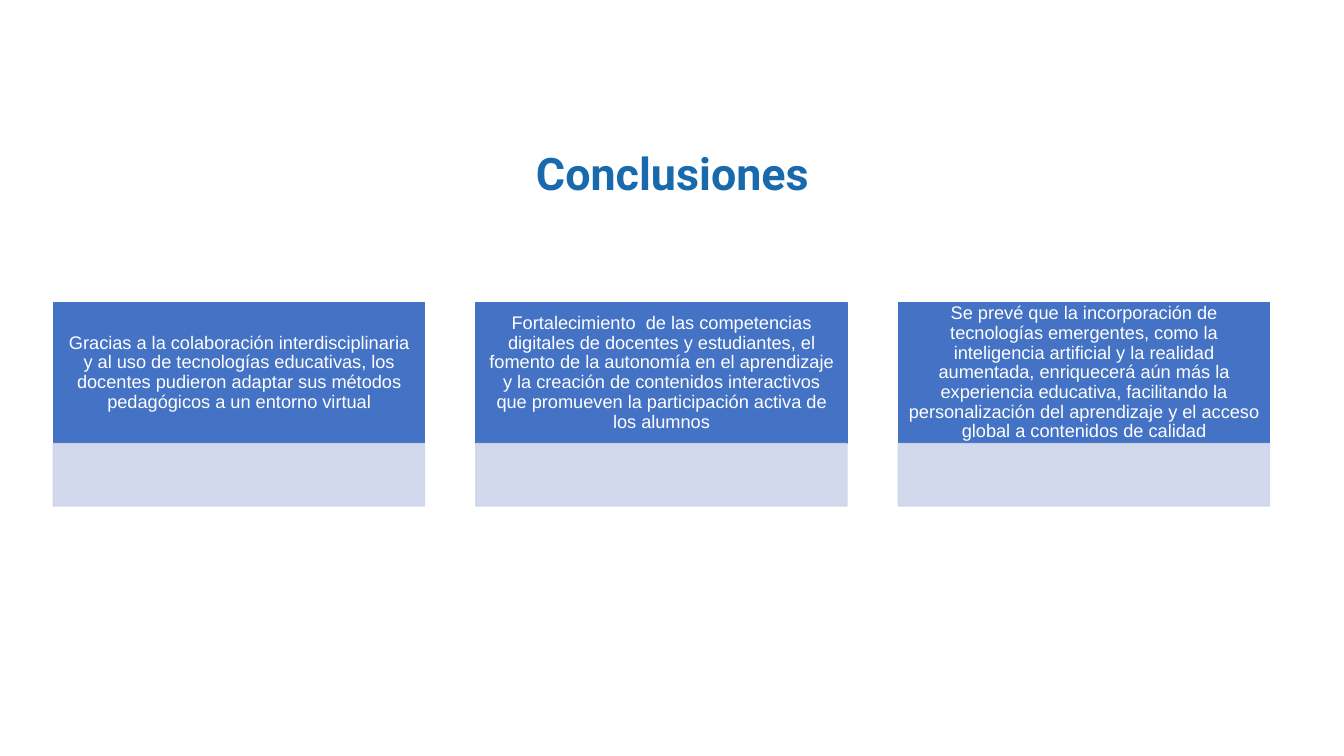
from lxml import etree
from pptx import Presentation
from pptx import util as u
from pptx.dml.color import RGBColor
from pptx.enum import shapes, text
from pptx.oxml.ns import qn

WIDE, HIGH = 13.33, 7.5
LEFT, TOP, STEP = 0.53, 3, 4.19
CARD, HEAD, FOOT = 3.68, 1.4, 0.62
BLUE, PALE, WHITE, TITLE = "4472C4", "CFD5EA", "FFFFFF", "186AAD"
POINTS = [
    "Gracias a la colaboración interdisciplinaria y al uso de tecnologías educativas, "
    "los docentes pudieron adaptar sus métodos pedagógicos a un entorno virtual",
    "Fortalecimiento  de las competencias digitales de docentes y estudiantes, el fomento "
    "de la autonomía en el aprendizaje y la creación de contenidos interactivos que "
    "promueven la participación activa de los alumnos",
    "Se prevé que la incorporación de tecnologías emergentes, como la inteligencia "
    "artificial y la realidad aumentada, enriquecerá aún más la experiencia educativa, "
    "facilitando la personalización del aprendizaje y el acceso global a contenidos de calidad",
]


def paint(fill, code, alpha=100):
    fill.solid()
    fill.fore_color.rgb = RGBColor.from_string(code)
    if alpha < 100:
        for tint in fill._xPr.iter(qn("a:srgbClr")):
            if tint.find(qn("a:alpha")) is None:
                etree.SubElement(tint, qn("a:alpha"), val=str(alpha * 1000))


def write(frame, words, size, font, code, bold=False):
    frame.word_wrap = True
    frame.text = words
    para = frame.paragraphs[0]
    para.alignment = text.PP_ALIGN.CENTER
    para.line_spacing = 0.9
    para.font.size = u.Pt(size)
    para.font.name = font
    para.font.bold = bold
    paint(para.font.fill, code)


def add_title(slide, words):
    title = slide.shapes.title
    title.left, title.top = u.Inches(0.92), u.Inches(1.4)
    title.width, title.height = u.Inches(11.5), u.Inches(0.64)
    title.text_frame.vertical_anchor = text.MSO_ANCHOR.BOTTOM
    write(title.text_frame, words, 32, "Roboto", TITLE, True)


def add_box(slide, left, top, high, code, alpha=100):
    box = slide.shapes.add_shape(
        shapes.MSO_SHAPE.RECTANGLE,
        u.Inches(left), u.Inches(top), u.Inches(CARD), u.Inches(high))
    box.shadow.inherit = False
    paint(box.fill, code, alpha)
    paint(box.line.fill, code, alpha)
    box.line.width = u.Pt(1)
    return box


def add_card(slide, col, words):
    left = LEFT + col * STEP
    frame = add_box(slide, left, TOP, HEAD, BLUE).text_frame
    frame.margin_left = frame.margin_right = u.Inches(0.1)
    frame.margin_top = frame.margin_bottom = u.Inches(0.06)
    frame.vertical_anchor = text.MSO_ANCHOR.MIDDLE
    write(frame, words, 13, "Arial", WHITE)
    add_box(slide, left, TOP + HEAD, FOOT, PALE, 90)


def main():
    deck = Presentation()
    deck.slide_width, deck.slide_height = u.Inches(WIDE), u.Inches(HIGH)
    slide = deck.slides.add_slide(deck.slide_layouts[5])
    add_title(slide, "Conclusiones")
    for col, words in enumerate(POINTS):
        add_card(slide, col, words)
    deck.save("out.pptx")


if __name__ == "__main__":
    main()
